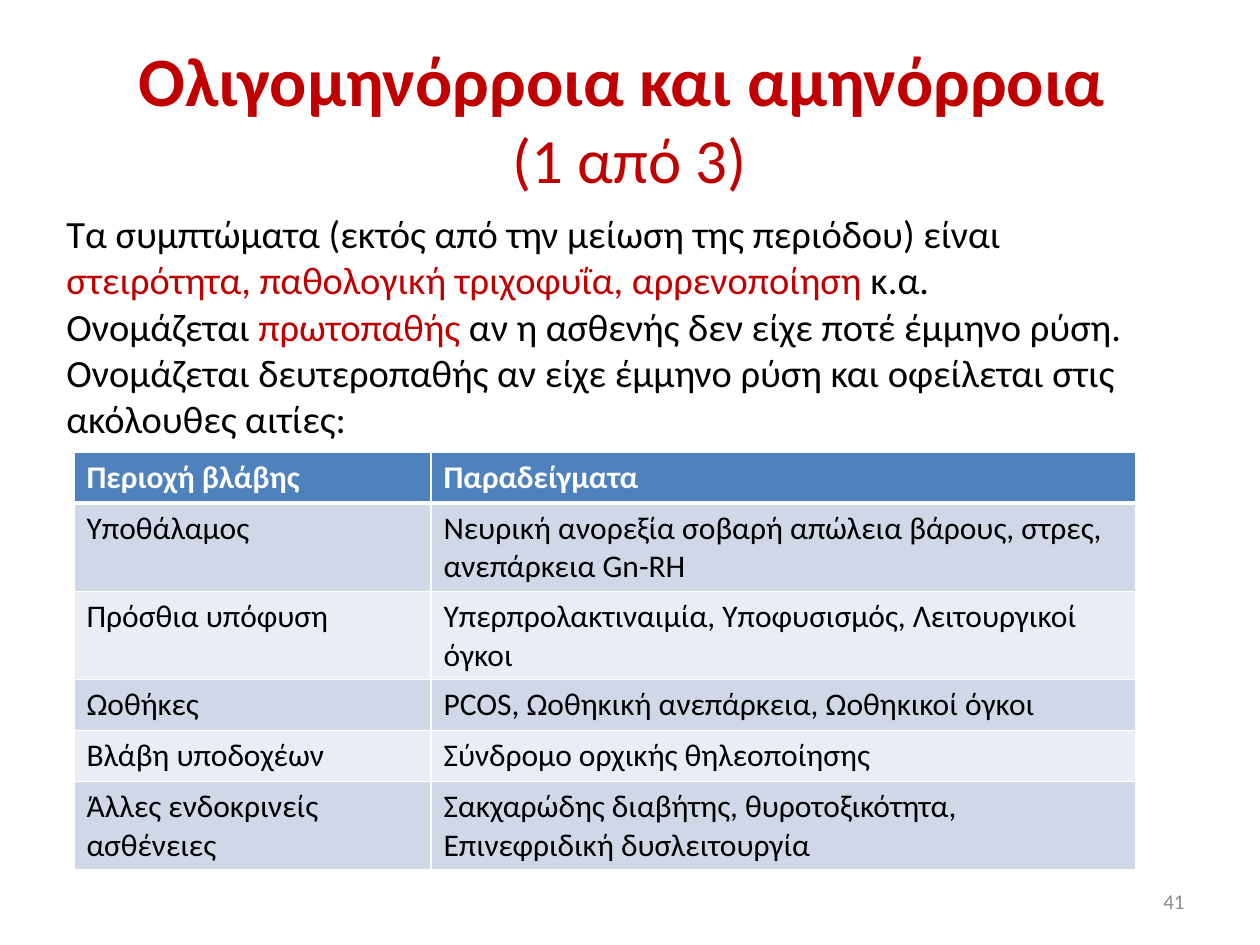
import dataclasses

import lxml.etree
import pptx
import pptx.dml.color
import pptx.enum.text
import pptx.oxml.ns
import pptx.util

ALIGN = pptx.enum.text.PP_ALIGN
ANCHOR = pptx.enum.text.MSO_ANCHOR


@dataclasses.dataclass(frozen=True)
class Theme:
    font: str = "Calibri"
    accent: str = "C00000"
    ink: str = "000000"
    paper: str = "FFFFFF"
    muted: str = "8C8C8C"
    header: str = "4F81BD"
    bands: tuple = ("D0D8E8", "E9EDF4")
    title_size: float = 39.6
    part_size: float = 36
    body_size: float = 22
    table_size: float = 18
    number_size: float = 12
    thin_line: int = 1
    thick_line: int = 3


THEME = Theme()

SYMPTOMS = [
    [("Τα συμπτώματα (εκτός από την μείωση της περιόδου) είναι ", THEME.ink),
     ("στειρότητα, παθολογική τριχοφυΐα, αρρενοποίηση ", THEME.accent),
     ("κ.α.", THEME.ink)],
    [("Ονομάζεται ", THEME.ink),
     ("πρωτοπαθής ", THEME.accent),
     ("αν η ασθενής δεν είχε ποτέ έμμηνο ρύση.", THEME.ink)],
    [("Ονομάζεται δευτεροπαθής αν είχε έμμηνο ρύση και οφείλεται στις "
      "ακόλουθες αιτίες:", THEME.ink)],
]

CAUSES = [
    ("Περιοχή βλάβης", "Παραδείγματα"),
    ("Υποθάλαμος",
     "Νευρική ανορεξία σοβαρή απώλεια βάρους, στρες, ανεπάρκεια Gn-RH"),
    ("Πρόσθια υπόφυση",
     "Υπερπρολακτιναιμία, Υποφυσισμός, Λειτουργικοί όγκοι"),
    ("Ωοθήκες", "PCOS, Ωοθηκική ανεπάρκεια, Ωοθηκικοί όγκοι"),
    ("Βλάβη υποδοχέων", "Σύνδρομο ορχικής θηλεοποίησης"),
    ("Άλλες ενδοκρινείς ασθένειες",
     "Σακχαρώδης διαβήτης, θυροτοξικότητα, Επινεφριδική δυσλειτουργία"),
]
COLUMN_WIDTHS = (357, 705)
ROW_HEIGHTS = (51, 88, 88, 51, 51, 88)


def px(length):
    return pptx.util.Emu(round(length * 914400 / 126))


def rgb(color):
    return pptx.dml.color.RGBColor.from_string(color)


def write(paragraph, text, *, size, color=THEME.ink, bold=False, align=ALIGN.LEFT):
    paragraph.alignment = align
    run = paragraph.add_run()
    run.text = text
    run.font.name = THEME.font
    run.font.size = pptx.util.Pt(size)
    run.font.bold = bold
    run.font.color.rgb = rgb(color)


def add_text_frame(slide, left, top, width, height, anchor=ANCHOR.TOP):
    box = slide.shapes.add_textbox(px(left), px(top), px(width), px(height))
    frame = box.text_frame
    frame.word_wrap = True
    frame.vertical_anchor = anchor
    return frame


def add_title(slide):
    frame = add_text_frame(slide, 63, 38, 1134, 158, ANCHOR.MIDDLE)
    heading = frame.paragraphs[0]
    write(heading, "Ολιγομηνόρροια και αμηνόρροια ", size=THEME.title_size,
          color=THEME.accent, bold=True, align=ALIGN.CENTER)
    heading.add_line_break()
    write(heading, "(1 από 3)", size=THEME.part_size,
          color=THEME.accent, align=ALIGN.CENTER)


def add_symptoms(slide):
    frame = add_text_frame(slide, 54, 204, 1131, 386)
    for index, phrases in enumerate(SYMPTOMS):
        paragraph = frame.add_paragraph() if index else frame.paragraphs[0]
        for text, color in phrases:
            write(paragraph, text, size=THEME.body_size, color=color)


def add_page_number(slide):
    frame = add_text_frame(slide, 903, 876, 294, 50, ANCHOR.MIDDLE)
    write(frame.paragraphs[0], "41", size=THEME.number_size,
          color=THEME.muted, align=ALIGN.RIGHT)


def set_borders(cell, **widths):
    properties = cell._tc.get_or_add_tcPr()
    qn = pptx.oxml.ns.qn
    for side in "LRTB":
        width = widths.get(side, THEME.thin_line)
        line = lxml.etree.SubElement(properties, qn(f"a:ln{side}"),
                                     w=str(pptx.util.Pt(width)))
        fill = lxml.etree.SubElement(line, qn("a:solidFill"))
        lxml.etree.SubElement(fill, qn("a:srgbClr"), val=THEME.paper)


def format_cell(cell, text, row):
    is_header = row == 0
    if is_header:
        set_borders(cell, B=THEME.thick_line)
    elif row == 1:
        set_borders(cell, T=THEME.thick_line)
    else:
        set_borders(cell)
    cell.fill.solid()
    cell.fill.fore_color.rgb = rgb(
        THEME.header if is_header else THEME.bands[(row - 1) % 2])
    write(cell.text_frame.paragraphs[0], text, size=THEME.table_size,
          color=THEME.paper if is_header else THEME.ink, bold=is_header)


def add_causes_table(slide):
    table = slide.shapes.add_table(
        len(CAUSES), len(COLUMN_WIDTHS), px(74), px(452),
        px(sum(COLUMN_WIDTHS)), px(sum(ROW_HEIGHTS))).table
    for column, width in zip(table.columns, COLUMN_WIDTHS):
        column.width = px(width)
    for row, height in zip(table.rows, ROW_HEIGHTS):
        row.height = px(height)
    for row, texts in enumerate(CAUSES):
        for column, text in enumerate(texts):
            format_cell(table.cell(row, column), text, row)


def main():
    deck = pptx.Presentation()
    deck.slide_width, deck.slide_height = px(1260), px(945)
    slide = deck.slides.add_slide(deck.slide_layouts[6])
    add_title(slide)
    add_page_number(slide)
    add_symptoms(slide)
    add_causes_table(slide)
    deck.save("out.pptx")


if __name__ == "__main__":
    main()
